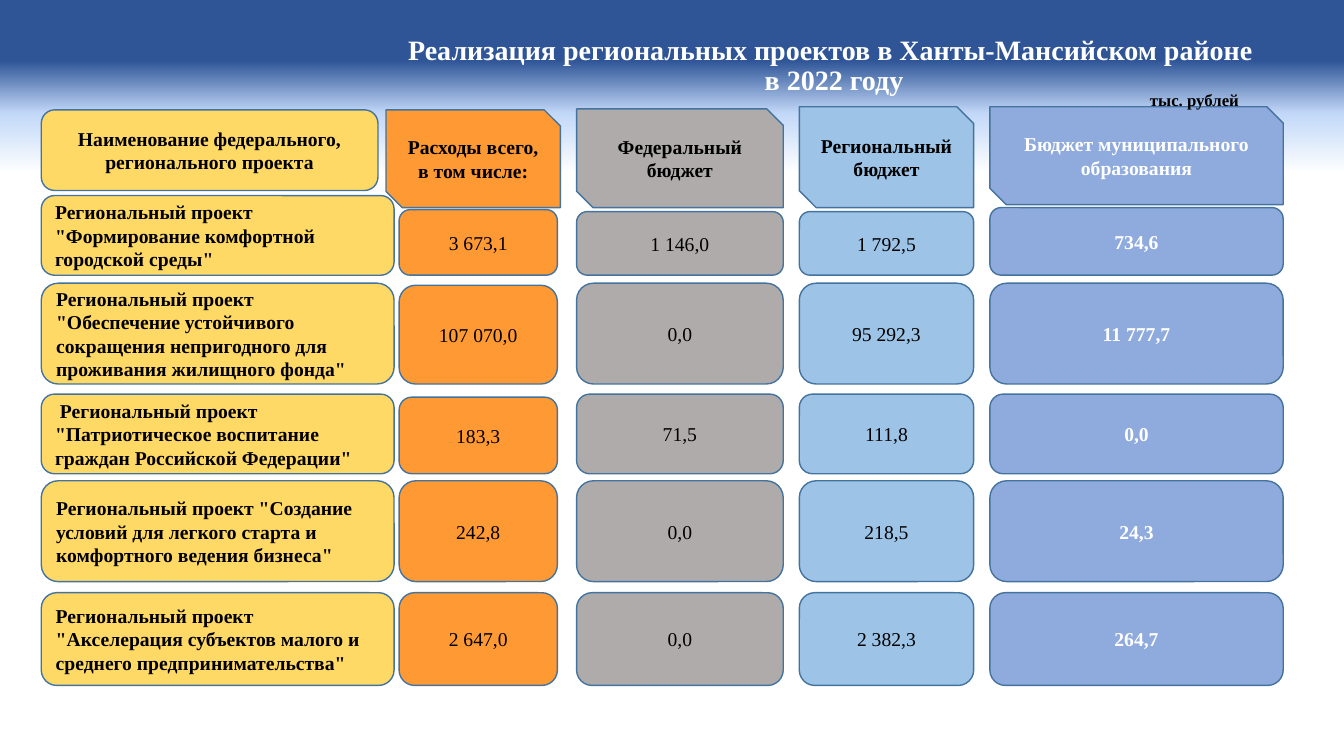
import copy

import pptx
import pptx.dml.color
import pptx.enum.shapes
import pptx.enum.text
import pptx.oxml.ns
import pptx.util

RGB = pptx.dml.color.RGBColor
SHAPE = pptx.enum.shapes.MSO_SHAPE
ALIGN = pptx.enum.text.PP_ALIGN
ANCHOR = pptx.enum.text.MSO_ANCHOR
AUTO = pptx.enum.text.MSO_AUTO_SIZE
qn = pptx.oxml.ns.qn

BLACK = RGB(0x00, 0x00, 0x00)
WHITE = RGB(0xFF, 0xFF, 0xFF)
NAVY = RGB(0x2F, 0x55, 0x97)
PALE = RGB(0xC2, 0xD8, 0xF8)
OUTLINE = RGB(0x43, 0x73, 0x9E)
YELLOW = RGB(0xFF, 0xD9, 0x66)
ORANGE = RGB(0xFF, 0x99, 0x33)
GREY = RGB(0xAF, 0xAB, 0xAB)
SKY = RGB(0x9D, 0xC3, 0xE6)
BLUE = RGB(0x8F, 0xAA, 0xDC)

FONT = "Times New Roman"
COLS, ROWS = 133.33, 75
CELL = pptx.util.Inches(0.1)
LEFT, WIDTH = 4.1, 123.2
LABEL_WIDTH = 35

COLUMNS = [
    (35.5, 15.7, ORANGE, BLACK, False),
    (53.1, 20.5, GREY, BLACK, False),
    (75.2, 17.3, SKY, BLACK, False),
    (94.1, 29.1, BLUE, WHITE, True),
]

HEADERS = [
    ("Расходы всего, в том числе:", 34.2, 0.3, 17.3, 9.7),
    ("Федеральный бюджет", 53.1, 0.2, 20.5, 9.8),
    ("Региональный бюджет", 75.2, 0, 17.3, 10),
    ("Бюджет муниципального образования", 94.1, 0, 29.1, 9.7),
]

PROJECTS = [
    ('Региональный проект "Формирование комфортной городской среды"',
     19.4, 7.9, (1.4, 1.6, 1.6, 1.2), ("3 673,1", "1 146,0", "1 792,5", "734,6")),
    ('Региональный проект "Обеспечение устойчивого сокращения непригодного для проживания жилищного фонда"',
     28.1, 10, (0.2, 0, 0, 0), ("107 070,0", "0,0", "95 292,3", "11 777,7")),
    (' Региональный проект "Патриотическое воспитание граждан Российской Федерации"',
     39.1, 7.9, (0.3, 0, 0, 0), ("183,3", "71,5", "111,8", "0,0")),
    ('Региональный проект "Создание условий для легкого старта и комфортного ведения бизнеса"',
     47.7, 10, (0, 0, 0, 0), ("242,8", "0,0", "218,5", "24,3")),
    ('Региональный проект "Акселерация субъектов малого и среднего предпринимательства"',
     58.8, 9.2, (0, 0, 0, 0), ("2 647,0", "0,0", "2 382,3", "264,7")),
]


def grid(*cells):
    """Convert grid cells to slide lengths."""
    return [round(c * CELL) for c in cells]


def write(tf, text, size=14, color=BLACK, bold=True, align=ALIGN.CENTER, anchor=ANCHOR.MIDDLE):
    """Write one formatted paragraph into a text frame."""
    tf.word_wrap = True
    tf.vertical_anchor = anchor
    p = tf.paragraphs[0]
    p.text = text
    p.alignment = align
    for r in p.runs:
        r.font.name = FONT
        r.font.size = pptx.util.Pt(size)
        r.font.bold = bold
        r.font.color.rgb = color
    return p


def card(s, kind, box, fill, text, **fmt):
    """Add an outlined shape with text."""
    sp = s.shapes.add_shape(kind, *grid(*box))
    sp.shadow.inherit = False
    sp.fill.solid()
    sp.fill.fore_color.rgb = fill
    sp.line.color.rgb = OUTLINE
    sp.line.width = pptx.util.Pt(1)
    write(sp.text_frame, text, **fmt)


def background(s):
    """Fill the slide with the vertical three-stop gradient."""
    fill = s.background.fill
    fill.gradient()
    fill.gradient_angle = 270
    stops = s.element.find(".//" + qn("a:gsLst"))
    stops.append(copy.deepcopy(stops[-1]))
    for stop, position, color in zip(fill.gradient_stops, (0.08, 0.15, 0.23), (NAVY, PALE, WHITE)):
        stop.position = position
        stop.color.rgb = color


def heading(s, box):
    """Place the title and the unit note below its right end."""
    x, y, w, h = box
    title = s.shapes.title
    title.left, title.top, title.width, title.height = grid(*box)
    tf = title.text_frame
    tf.auto_size = AUTO.NONE
    p = write(tf, "Реализация региональных проектов в Ханты-Мансийском районе\v в 2022 году",
              size=20, color=WHITE)
    p.line_spacing = 0.9
    br = p._p.find(qn("a:br"))
    br.insert(0, copy.deepcopy(p.runs[0].font._element))
    note = s.shapes.add_textbox(*grid(x + w - 14.2, y + 4.4, 12.6, 3))
    write(note.text_frame, "тыс. рублей", size=12, align=ALIGN.LEFT, anchor=ANCHOR.TOP)
    note.text_frame.auto_size = AUTO.SHAPE_TO_FIT_TEXT


def project_row(s, box, name, drops, values):
    """Place a project name and its four amounts."""
    x, y, w, h = box
    card(s, SHAPE.ROUNDED_RECTANGLE, (x, y, LABEL_WIDTH, h), YELLOW, name, align=ALIGN.LEFT)
    for (dx, width, fill, color, bold), drop, value in zip(COLUMNS, drops, values):
        card(s, SHAPE.ROUNDED_RECTANGLE, (x + dx, y + drop, width, h - drop), fill, value,
             color=color, bold=bold)


def header_row(s, box):
    """Place the column headings."""
    x, y, w, h = box
    for (text, dx, dy, width, height), (_, _, fill, color, _) in zip(HEADERS, COLUMNS):
        card(s, SHAPE.SNIP_2_DIAG_RECTANGLE, (x + dx, y + dy, width, height), fill, text, color=color)
    card(s, SHAPE.ROUNDED_RECTANGLE, (x, y + 0.3, 33.4, 8), YELLOW,
         "Наименование федерального, регионального проекта")


def main():
    """Build and save the slide."""
    prs = pptx.Presentation()
    prs.slide_width, prs.slide_height = grid(COLS, ROWS)
    s = prs.slides.add_slide(prs.slide_layouts[5])
    background(s)
    for name, top, height, drops, values in PROJECTS:
        project_row(s, (LEFT, top, WIDTH, height), name, drops, values)
    header_row(s, (LEFT, 10.6, WIDTH, 10))
    heading(s, (37.5, 4, 89.8, 5.2))
    prs.save("out.pptx")


if __name__ == "__main__":
    main()
